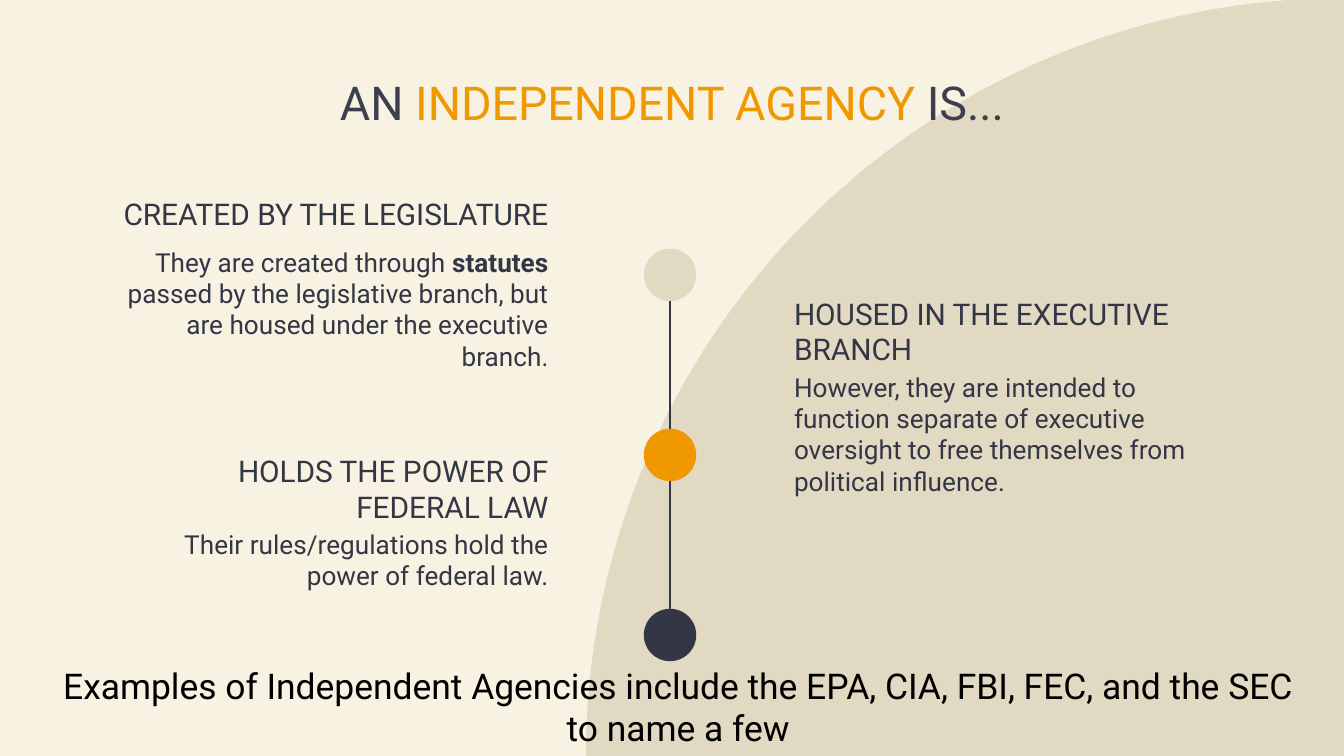
from dataclasses import dataclass

from lxml import etree
from pptx import Presentation
from pptx.dml.color import RGBColor
from pptx.enum.shapes import MSO_CONNECTOR, MSO_SHAPE
from pptx.enum.text import MSO_ANCHOR, MSO_AUTO_SIZE, PP_ALIGN
from pptx.oxml.ns import qn
from pptx.util import Pt

PX = 4572  # EMU per px, 200 px to the inch
SLIDE_W, SLIDE_H = 2000, 1125


@dataclass(frozen=True)
class Theme:
    font: str = "Roboto"
    cream: str = "F7F2E2"
    sand: str = "E2D9C3"
    orange: str = "F09800"
    navy: str = "333644"
    slate: str = "3C3F4E"
    black: str = "000000"
    title: int = 25
    heading: int = 16
    body: int = 14
    footer: int = 19
    line: float = 1.5


T = Theme()


def emu(*lengths):
    return [n * PX for n in lengths]


def add_text(slide, box, runs, size, align, anchor=MSO_ANCHOR.TOP):
    """Place one paragraph; runs are (text, colour, bold)."""
    sp = slide.shapes.add_textbox(*emu(*box))
    tf = sp.text_frame
    tf.word_wrap = True
    tf.vertical_anchor = anchor
    tf.margin_left = tf.margin_right = tf.margin_top = tf.margin_bottom = 20 * PX
    p = tf.paragraphs[0]
    p.alignment = align
    for text, color, bold in runs:
        r = p.add_run()
        r.text = text
        r.font.name = T.font
        r.font.size = Pt(size)
        r.font.bold = bold
        r.font.color.rgb = RGBColor.from_string(color)
    return sp


def add_filled(slide, kind, box, color):
    sp = slide.shapes.add_shape(kind, *emu(*box))
    sp.shadow.inherit = False
    sp.fill.solid()
    sp.fill.fore_color.rgb = RGBColor.from_string(color)
    sp.line.fill.background()
    return sp


def add_backdrop(slide, radius):
    """Quarter disc centred on the bottom right corner."""
    fill = slide.background.fill
    fill.solid()
    fill.fore_color.rgb = RGBColor.from_string(T.cream)
    box = (SLIDE_W - radius, SLIDE_H - radius, 2 * radius, 2 * radius)
    pie = add_filled(slide, MSO_SHAPE.PIE, box, T.sand)
    pie.adjustments[0] = 108  # 180 degrees
    pie.adjustments[1] = 162  # 270 degrees


def add_title(slide, box):
    runs = [("AN ", T.slate, False),
            ("INDEPENDENT AGENCY ", T.orange, False),
            ("IS...", T.slate, False)]
    add_text(slide, box, runs, T.title, PP_ALIGN.CENTER)


def add_point(slide, box, body_offset, heading, body, align):
    """Heading sitting on its baseline box, with the body text below."""
    x, y, w, h = box
    add_text(slide, (x, y, w, 110), [(heading, T.navy, False)],
             T.heading, align, MSO_ANCHOR.BOTTOM)
    runs = [(text, T.navy, bold) for text, bold in body]
    add_text(slide, (x, y + body_offset, w, h - body_offset), runs, T.body, align)


def add_timeline(slide, box, colors):
    """Evenly spaced dots, joined by vertical lines."""
    x, y, dot, h = box
    step = (h - dot) // (len(colors) - 1)
    tops = [y + i * step for i in range(len(colors))]
    for top, color in zip(tops, colors):
        add_filled(slide, MSO_SHAPE.OVAL, (x, top, dot, dot), color)
    mid = x + dot // 2
    for top, following in zip(tops, tops[1:]):
        s = slide.shapes.add_connector(
            MSO_CONNECTOR.STRAIGHT, *emu(mid, top + dot, mid, following))
        s.line.color.rgb = RGBColor.from_string(T.navy)
        s.line.width = Pt(T.line)
        etree.SubElement(s._element.spPr, qn("a:effectLst"))


def add_footer(slide, box):
    text = ("Examples of Independent Agencies include the EPA, CIA, FBI, FEC, "
            "and the SEC to name a few")
    sp = add_text(slide, box, [(text, T.black, False)], T.footer, PP_ALIGN.CENTER)
    sp.text_frame.auto_size = MSO_AUTO_SIZE.SHAPE_TO_FIT_TEXT


def main():
    prs = Presentation()
    prs.slide_width, prs.slide_height = emu(SLIDE_W, SLIDE_H)
    slide = prs.slides.add_slide(prs.slide_layouts[6])

    add_backdrop(slide, 1128)
    add_title(slide, (260, 90, 1480, 144))

    # Points on both sides of the timeline
    add_point(slide, (156, 254, 680, 344), 92, "CREATED BY THE LEGISLATURE",
              [("They are created through ", False), ("statutes", True),
               (" passed by the legislative branch, but are housed under "
                "the executive branch.", False)], PP_ALIGN.RIGHT)
    add_point(slide, (1162, 456, 680, 266), 76, "HOUSED IN THE EXECUTIVE BRANCH",
              [("However, they are intended to function separate of executive "
                "oversight to free themselves from political influence.", False)],
              PP_ALIGN.LEFT)
    add_point(slide, (156, 690, 680, 202), 76, "HOLDS THE POWER OF FEDERAL LAW",
              [("Their rules/regulations hold the power of federal law.", False)],
              PP_ALIGN.RIGHT)

    add_timeline(slide, (958, 370, 78, 614), [T.sand, T.orange, T.navy])
    add_footer(slide, (74, 968, 1870, 168))
    prs.save("out.pptx")


if __name__ == "__main__":
    main()
